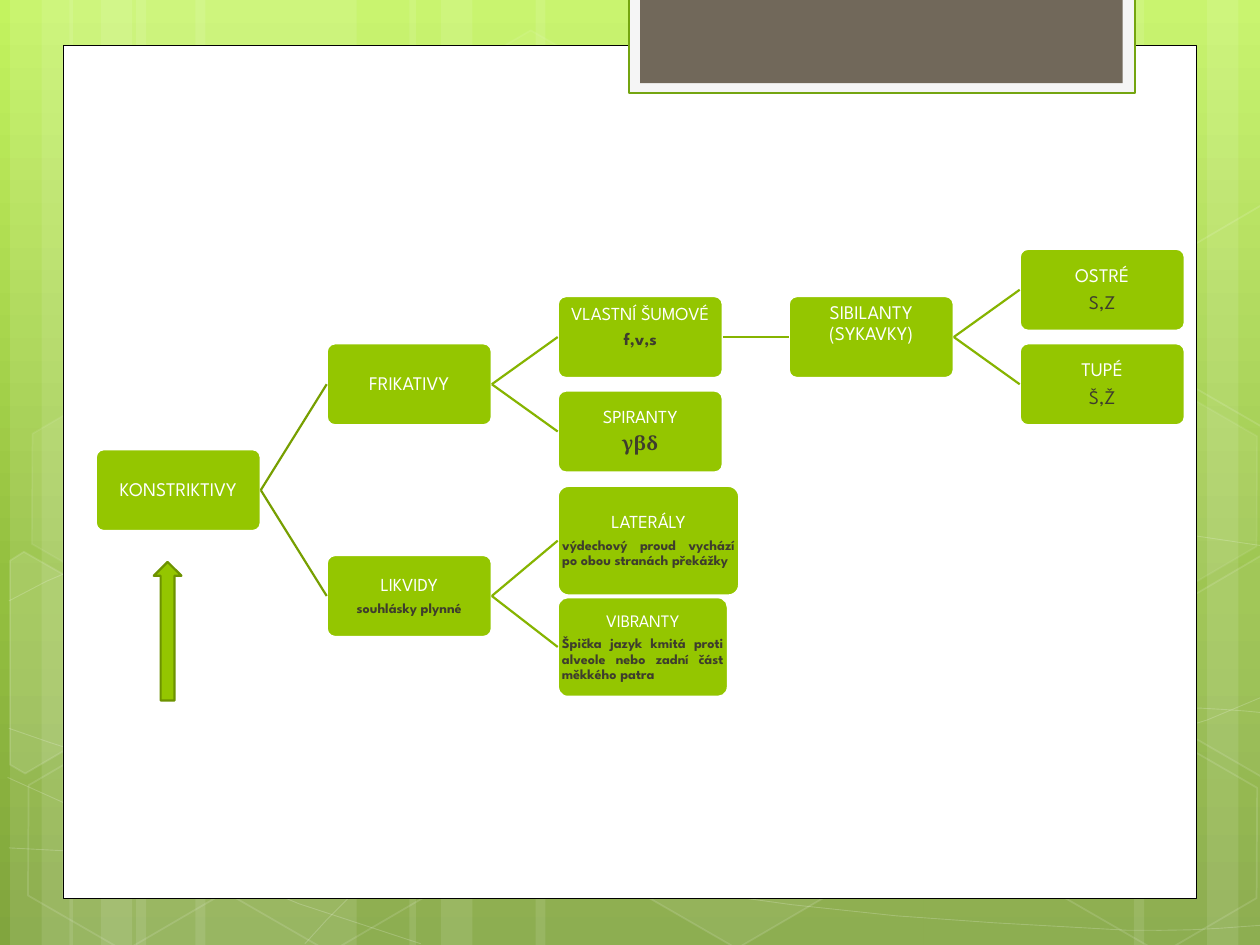
import copy

import pptx
import pptx.util
from pptx.dml.color import RGBColor
from pptx.enum.shapes import MSO_CONNECTOR, MSO_SHAPE
from pptx.enum.text import MSO_ANCHOR, PP_ALIGN
from pptx.oxml import parse_xml
from pptx.oxml.ns import nsdecls, qn

Inches, Pt = pptx.util.Inches, pptx.util.Pt

WHITE = RGBColor(0xFF, 0xFF, 0xFF)
BLACK = RGBColor(0x00, 0x00, 0x00)
OFF_WHITE = RGBColor(0xF5, 0xF5, 0xF5)
BROWN = RGBColor(0x71, 0x68, 0x5A)
DARK = RGBColor(0x3E, 0x3D, 0x2D)
GREEN = RGBColor(0x94, 0xC6, 0x00)
TAB_EDGE = RGBColor(0x74, 0xA5, 0x10)
ARROW_EDGE = RGBColor(0x6D, 0x92, 0x00)
LINK_MAIN = RGBColor(0x77, 0x9F, 0x00)
LINK_SUB = RGBColor(0x86, 0xB4, 0x00)
BG_STOPS = [(0, RGBColor(0xC3, 0xF3, 0x5F)), (0.62, RGBColor(0x93, 0xBF, 0x3F)),
            (1, RGBColor(0x81, 0xA5, 0x3E))]
FONT = "League Spartan"
W, H = 10, 7.5

# Backdrop: stripes as (left, width), hexagons as (left, top, fill alpha, line alpha)
STRIPES = [(1.08, 1.75), (0.08, 0.5), (0.33, 0.83), (1.55, 1.75), (0.55, 0.5), (0.8, 0.83),
           (7.33, 1.75), (9.58, 0.5), (9, 0.83), (4.25, 3.08), (3.25, 0.5), (3.5, 0.83)]
HEXAGONS = [(3.34, 0.36, 4, 8), (4.97, 5.89, 6, 12), (0.11, 5.91, 0, 12), (0.14, 3.12, 7, 8),
            (1.74, 5.92, 0, 12), (7.53, 4.53, 10, 12), (8.34, 5.93, 0, 12), (8.34, 3.14, 7, 8)]
# Hexagons cut by the slide edge: (points, fill alpha)
CUT_HEXAGONS = [
    ([(0.08, 4.45), (0.19, 4.38), (0.96, 4.82), (0.95, 5.7), (0.2, 6.14), (0.08, 6.07)], 10),
    ([(9.26, 4.85), (10.01, 4.41), (10.09, 4.46), (10.09, 6.13), (10.02, 6.17), (9.26, 5.73)], 4),
    ([(9.26, 2.07), (10.01, 1.63), (10.1, 1.68), (10.09, 3.35), (10.02, 3.39), (9.26, 2.95)], 0),
]
# Bezier chains: a start, then two control points and an end for each piece
CURVES = [
    [(0.07, 6.73), (0.61, 6.76), (1.15, 6.79), (1.9, 6.78), (2.65, 6.77), (3.58, 6.75),
     (4.58, 6.65), (5.58, 6.55), (7, 6.36), (7.92, 6.17), (8.83, 5.98), (9.77, 5.68),
     (10.07, 5.51)],
    [(0.07, 4.77), (0.36, 4.61), (0.65, 4.46), (1.21, 4.31), (1.78, 4.16), (2.59, 3.94),
     (3.47, 3.87), (4.36, 3.8), (5.44, 3.79), (6.54, 3.87), (7.64, 3.95), (9.47, 4.26),
     (10.07, 4.34)],
    [(0.06, 6.17), (1.27, 6.72), (2.47, 7.27), (3.34, 7.49)],
    [(0.07, 5.78), (0.38, 5.89), (0.7, 6), (1.28, 6.16), (1.86, 6.31), (2.73, 6.56),
     (3.57, 6.73), (4.4, 6.9), (5.45, 7.08), (6.28, 7.18), (7.11, 7.29), (8, 7.33),
     (8.53, 7.36), (9.05, 7.4), (9.19, 7.38), (9.45, 7.38), (9.71, 7.37), (9.89, 7.35),
     (10.07, 7.34)],
    [(2.42, 7.49), (2.6, 7.29), (2.78, 7.09), (3.02, 6.91), (3.26, 6.73), (3.6, 6.53),
     (3.88, 6.39), (4.16, 6.25), (4.33, 6.19), (4.7, 6.09), (5.06, 5.99), (5.73, 5.85),
     (6.08, 5.78), (6.44, 5.71), (6.49, 5.71), (6.8, 5.69), (7.11, 5.66), (7.6, 5.63),
     (7.94, 5.62), (8.29, 5.61), (9.1, 5.62), (9.53, 5.62), (9.71, 5.63), (9.88, 5.64),
     (10.06, 5.66)],
]

# Tree: name -> (column, row of the centre, width, height, heading size, space below, second line)
# The second line is (text, size, bold, font, alignment)
BOX_W, BOX_H, COL, ROW = 1.31, 0.65, 1.8333, 0.375
C, J = PP_ALIGN.CENTER, PP_ALIGN.JUSTIFY
NODES = {
    "KONSTRIKTIVY": (0, 4.24, BOX_W, BOX_H, 11, 0, None),
    "FRIKATIVY": (1, 2, BOX_W, BOX_H, 11, 0, None),
    "VLASTNÍ ŠUMOVÉ": (2, 1, BOX_W, BOX_H, 10.5, 0.16, ("f,v,s", 10, True, FONT, C)),
    "SIBILANTY (SYKAVKY)": (3, 1, BOX_W, BOX_H, 11, 0.21, None),
    "OSTRÉ": (4, 0, BOX_W, BOX_H, 11, 0, ("S,Z", 11, False, FONT, C)),
    "TUPÉ": (4, 2, BOX_W, BOX_H, 11, 0, ("Š,Ž", 11, False, FONT, C)),
    "SPIRANTY": (2, 3, BOX_W, BOX_H, 10.5, 0, ("γβδ", 11, True, "Cambria", C)),
    "LIKVIDY": (1, 6.48, BOX_W, BOX_H, 10.5, 0, ("souhlásky plynné", 8, True, FONT, C)),
    "LATERÁLY": (2, 5.31, 1.44, 0.87, 10.5, 0,
                 ("výdechový proud vychází po obou stranách překážky", 8, True, FONT, J)),
    "VIBRANTY": (2, 7.56, 1.35, 0.79, 10, 0,
                 ("Špička jazyk kmitá proti alveole nebo zadní část měkkého patra",
                  8, True, FONT, J)),
}
CHILDREN = {
    "KONSTRIKTIVY": ["FRIKATIVY", "LIKVIDY"],
    "FRIKATIVY": ["VLASTNÍ ŠUMOVÉ", "SPIRANTY"],
    "VLASTNÍ ŠUMOVÉ": ["SIBILANTY (SYKAVKY)"],
    "SIBILANTY (SYKAVKY)": ["OSTRÉ", "TUPÉ"],
    "LIKVIDY": ["LATERÁLY", "VIBRANTY"],
}


def set_alpha(holder, percent):
    color = holder.find(qn("a:solidFill")).find(qn("a:srgbClr"))
    color.append(parse_xml(f'<a:alpha {nsdecls("a")} val="{percent * 1000}"/>'))


def style(sp, fill=None, line=None, width=1.0, fill_alpha=100, line_alpha=100):
    sp.shadow.inherit = False
    spPr = sp._element.spPr
    if fill is None or fill_alpha == 0:
        sp.fill.background()
    else:
        sp.fill.solid()
        sp.fill.fore_color.rgb = fill
        if fill_alpha < 100:
            set_alpha(spPr, fill_alpha)
    if line is None:
        sp.line.fill.background()
    else:
        sp.line.color.rgb = line
        sp.line.width = Pt(width)
        if line_alpha < 100:
            set_alpha(spPr.find(qn("a:ln")), line_alpha)


def add_shape(s, kind, x, y, w, h, **look):
    sp = s.shapes.add_shape(kind, Inches(x), Inches(y), Inches(w), Inches(h))
    style(sp, **look)
    return sp


def add_outline(s, points, close, **look):
    # The builder rounds to whole units, so it is given EMU
    points = [(Inches(x), Inches(y)) for x, y in points]
    builder = s.shapes.build_freeform(*points[0])
    builder.add_line_segments(points[1:], close=close)
    style(builder.convert_to_shape(), **look)


def flatten(chain, steps=3):
    points = [chain[0]]
    for i in range(0, len(chain) - 1, 3):
        for t in (k / steps for k in range(1, steps + 1)):
            weights = ((1 - t) ** 3, 3 * t * (1 - t) ** 2, 3 * t * t * (1 - t), t ** 3)
            points.append(tuple(sum(a * p[axis] for a, p in zip(weights, chain[i:i + 4]))
                                for axis in (0, 1)))
    return points


def add_backdrop(s, height):
    # Gradient
    fill = s.background.fill
    fill.gradient()
    fill.gradient_angle = 270
    stops = s._element.find(".//" + qn("a:gsLst"))
    stops.append(copy.deepcopy(stops[-1]))
    for stop, (position, color) in zip(fill.gradient_stops, BG_STOPS):
        stop.position = position
        stop.color.rgb = color
    # Stripes, curves and hexagons
    for x, w in STRIPES:
        add_shape(s, MSO_SHAPE.RECTANGLE, x, 0, w, height, fill=WHITE, fill_alpha=10)
    for chain in CURVES:
        add_outline(s, flatten(chain), False, line=WHITE, width=0.5, line_alpha=20)
    for x, y, fill_alpha, line_alpha in HEXAGONS:
        sp = add_shape(s, MSO_SHAPE.HEXAGON, x, y, 1.75, 1.52, fill=WHITE, line=WHITE,
                       fill_alpha=fill_alpha, line_alpha=line_alpha)
        sp.adjustments[0] = 0.285
        sp.rotation = 30
    for points, fill_alpha in CUT_HEXAGONS:
        add_outline(s, points, True, fill=WHITE, line=WHITE, fill_alpha=fill_alpha, line_alpha=12)


def add_panel(s, x, y, w, h):
    add_shape(s, MSO_SHAPE.RECTANGLE, x, y, w, h, fill=WHITE, line=BLACK, width=0.5)
    # Tab hanging from the top edge
    add_shape(s, MSO_SHAPE.RECTANGLE, x + 4.49, -0.02, 4.02, 0.76,
              fill=OFF_WHITE, line=TAB_EDGE, width=1.25)
    add_shape(s, MSO_SHAPE.RECTANGLE, x + 4.58, -0.02, 3.83, 0.68, fill=BROWN)


def add_line(p, text, size, bold, font, align, color):
    p.text = text
    p.alignment = align
    p.line_spacing = 0.9
    p.space_after = Pt(round(0.35 * size, 1))
    f = p.runs[0].font
    f.name, f.size, f.bold, f.color.rgb = font, Pt(size), bold, color


def add_node(s, x, y, w, h, name, size, space_below, second):
    sp = add_shape(s, MSO_SHAPE.ROUNDED_RECTANGLE, x, y, w, h, fill=GREEN, line=WHITE, width=1.25)
    sp.adjustments[0] = 0.1
    tf = sp.text_frame
    tf.word_wrap = True
    tf.vertical_anchor = MSO_ANCHOR.MIDDLE
    tf.margin_left = tf.margin_right = tf.margin_top = Inches(0.01)
    tf.margin_bottom = Inches(0.01 + space_below)
    add_line(tf.paragraphs[0], name, size, False, FONT, C, WHITE)
    if second:
        add_line(tf.add_paragraph(), *second, DARK)
    return sp


def add_tree(s, x, y):
    boxes = {}
    for name, (col, row, w, h, *text) in NODES.items():
        boxes[name] = add_node(s, x + col * COL, y + row * ROW - h / 2, w, h, name, *text)
    for parent, children in CHILDREN.items():
        for child in children:
            link = s.shapes.add_connector(MSO_CONNECTOR.STRAIGHT, 0, 0, 0, 0)
            link.begin_connect(boxes[parent], 3)
            link.end_connect(boxes[child], 1)
            link.line.color.rgb = LINK_MAIN if parent == "KONSTRIKTIVY" else LINK_SUB
            link.line.width = Pt(1.25)
            link._element.spPr.append(parse_xml(f'<a:effectLst {nsdecls("a")}/>'))
    # Arrow pointing at the root
    add_shape(s, MSO_SHAPE.UP_ARROW, x + 0.46, y + 2.16, 0.22, 1.1,
              fill=GREEN, line=ARROW_EDGE, width=1.25)


def main():
    prs = pptx.Presentation()
    prs.slide_width, prs.slide_height = Inches(W), Inches(H)
    s = prs.slides.add_slide(prs.slide_layouts[6])
    add_backdrop(s, H)
    add_panel(s, 0.5, 0.36, 9, 6.77)
    add_tree(s, 0.76, 2.3)
    prs.save("out.pptx")


if __name__ == "__main__":
    main()
